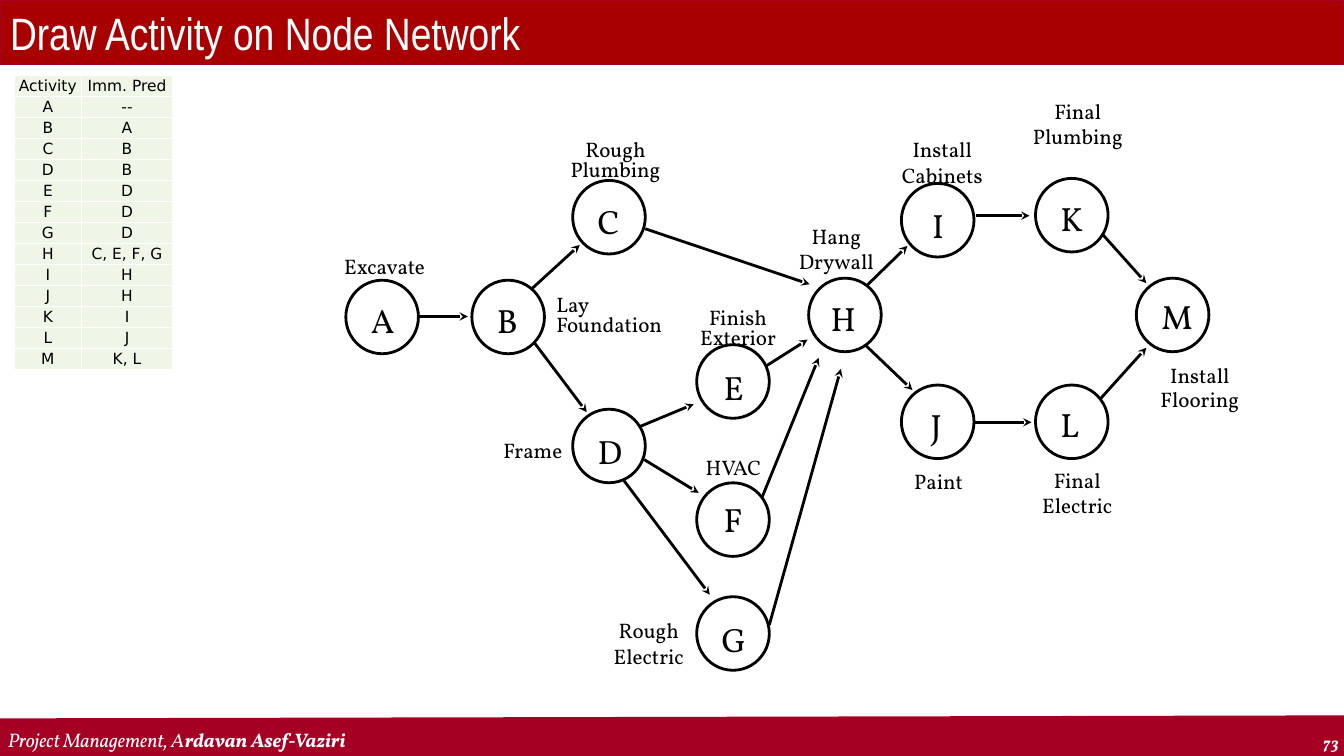
from lxml import etree
from pptx import Presentation
from pptx.dml.color import RGBColor
from pptx.enum.shapes import MSO_CONNECTOR, MSO_SHAPE
from pptx.enum.text import MSO_ANCHOR, MSO_AUTO_SIZE, PP_ALIGN
from pptx.oxml import parse_xml
from pptx.oxml.ns import nsdecls, qn
from pptx.util import Inches, Pt

# Content
TITLE = "Draw Activity on Node Network"
FOOTER = ("Project Management, A", "rdavan Asef-Vaziri")
PAGE = "73"
PREDECESSORS = [
    ("Activity", "Imm. Pred"), ("A", "--"), ("B", "A"), ("C", "B"), ("D", "B"),
    ("E", "D"), ("F", "D"), ("G", "D"), ("H", "C, E, F, G"), ("I", "H"),
    ("J", "H"), ("K", "I"), ("L", "J"), ("M", "K, L"),
]
# Letter: circle left and top, then offset of the letter box
NODES = {
    "A": (3.43, 2.78, 0.15, 0.15), "B": (4.68, 2.78, 0.15, 0.15),
    "C": (5.68, 1.79, 0.15, 0.15), "D": (5.68, 4.06, 0.15, 0.17),
    "E": (6.91, 3.42, 0.17, 0.17), "F": (6.91, 4.79, 0.17, 0.11),
    "G": (6.91, 5.92, 0.15, 0.17), "H": (8.02, 2.76, 0.12, 0.15),
    "I": (8.94, 1.82, 0.20, 0.16), "J": (8.94, 3.82, 0.18, 0.15),
    "K": (10.27, 1.77, 0.15, 0.14), "L": (10.27, 3.82, 0.15, 0.14),
    "M": (11.27, 2.76, 0.15, 0.13),
}
# Activity name, box, line spacing
ACTIVITIES = [
    ("Excavate", (3.23, 2.47, 1.17, 0.35), 1),
    ("Lay Foundation", (5.42, 2.89, 1.47, 0.51), 0.8),
    ("Rough Plumbing", (5.37, 1.35, 1.47, 0.51), 0.8),
    ("Frame", (4.7, 4.29, 1.17, 0.35), 1),
    ("Finish Exterior", (6.78, 3.02, 1.08, 0.51), 0.8),
    ("HVAC", (6.69, 4.46, 1.17, 0.35), 1),
    ("Rough Electric", (5.85, 6.08, 1.17, 0.61), 1),
    ("Hang Drywall", (7.71, 2.17, 1.17, 0.61), 1),
    ("Install Cabinets", (8.76, 1.31, 1.17, 0.61), 1),
    ("Paint", (8.89, 4.6, 0.84, 0.35), 1),
    ("Final Plumbing", (9.97, 0.93, 1.44, 0.61), 1),
    ("Final Electric", (10.11, 4.59, 1.15, 0.61), 1),
    ("Install\nFlooring", (11.38, 3.66, 1.04, 0.51), 0.5),
]
# Start and end of each precedence arrow
ARROWS = [
    (4.16, 3.14, 4.64, 3.14),   # A-B
    (5.28, 2.86, 5.75, 2.43),   # B-C
    (5.3, 3.4, 5.82, 4.09),     # B-D
    (6.35, 4.23, 6.88, 4.01),   # D-E
    (6.39, 4.56, 6.93, 4.89),   # D-F
    (6.19, 4.77, 7.04, 5.9),    # D-G
    (6.4, 2.27, 8.03, 2.82),    # C-H
    (7.6, 3.63, 8.01, 3.37),    # E-H
    (7.56, 4.93, 8.12, 3.55),   # F-H
    (7.63, 6.2, 8.34, 3.66),    # G-H
    (8.6, 2.83, 9, 2.44),       # H-I
    (8.59, 3.43, 9.05, 3.87),   # H-J
    (9.68, 2.14, 10.21, 2.14),  # I-K
    (9.67, 4.19, 10.23, 4.19),  # J-L
    (10.94, 2.33, 11.37, 2.81),  # K-M
    (10.92, 3.95, 11.37, 3.45),  # L-M
]
SERIF, NARROW, SANS = "Vollkorn", "Arial Narrow", "DejaVu Sans"
BLACK, WHITE, BAR, CRIMSON, PALE = "000000", "FFFFFF", "A80000", "A50023", "EFF6E7"


def rgb(value):
    return RGBColor.from_string(value)


def set_font(run, size, face, color=BLACK, bold=False, italic=False):
    run.font.size, run.font.name = Pt(size), face
    run.font.color.rgb = rgb(color)
    run.font.bold, run.font.italic = bold, italic


def set_line(item, color, width):
    item.line.color.rgb, item.line.width = rgb(color), Pt(width)


def add_text(text, box, size, align=PP_ALIGN.CENTER, spacing=1, **style):
    frame = slide.shapes.add_textbox(*map(Inches, box)).text_frame
    frame.word_wrap = True
    frame.auto_size = MSO_AUTO_SIZE.SHAPE_TO_FIT_TEXT
    frame.text = text
    for index, paragraph in enumerate(frame.paragraphs):
        paragraph.alignment, paragraph.line_spacing = align, spacing
        if index:
            paragraph.space_before = Pt(size / 2)
        set_font(paragraph.runs[0], size, SERIF, **style)
    return frame


def add_line(ends, color, width, arrow=False):
    line = slide.shapes.add_connector(MSO_CONNECTOR.STRAIGHT, *map(Inches, ends))
    set_line(line, color, width)
    if arrow:
        etree.SubElement(line.line._get_or_add_ln(), qn("a:tailEnd"), type="stealth")
    etree.SubElement(line.element.spPr, qn("a:effectLst"))


prs = Presentation()
prs.slide_width, prs.slide_height = Inches(13.33), Inches(7.5)
slide = prs.slides.add_slide(prs.slide_layouts[5])

# Title on its bar
title = slide.shapes.title
title.left, title.top, title.width, title.height = map(Inches, (0, 0, 13.33, 0.64))
title.text_frame.text = TITLE
title.text_frame.auto_size = MSO_AUTO_SIZE.NONE
title.text_frame.vertical_anchor = MSO_ANCHOR.MIDDLE
title.text_frame.paragraphs[0].alignment = PP_ALIGN.LEFT
set_font(title.text_frame.paragraphs[0].runs[0], 32.4, NARROW, WHITE)
set_line(title, CRIMSON, 0.75)
bar = slide.shapes.add_shape(MSO_SHAPE.RECTANGLE, *map(Inches, (0, -0.01, 13.33, 0.64)))
bar.shadow.inherit = False
bar.fill.solid()
bar.fill.fore_color.rgb = rgb(BAR)
set_line(bar, BAR, 0.75)
title.element.addprevious(bar.element)

# Footer
add_line((-0.01, 7.33, 13.36, 7.3), CRIMSON, 29.25)
add_text(PAGE, (12.38, 7.22, 1, 0.3), 12, PP_ALIGN.RIGHT,
         color=WHITE, bold=True, italic=True)
footer = add_text(FOOTER[0], (-0.02, 7.16, 10.45, 0.34), 14, PP_ALIGN.LEFT,
                  color=WHITE, italic=True)
footer.vertical_anchor = MSO_ANCHOR.BOTTOM
author = footer.paragraphs[0].add_run()
author.text = FOOTER[1]
set_font(author, 14, SERIF, WHITE, bold=True, italic=True)

# Network
for letter, (x, y, dx, dy) in NODES.items():
    circle = slide.shapes.add_shape(MSO_SHAPE.OVAL, *map(Inches, (x, y, 0.72, 0.73)))
    circle.shadow.inherit = False
    circle.fill.background()
    set_line(circle, BLACK, 2)
    add_text(letter, (x + dx, y + dy, 0.33, 0.51), 24)
for ends in ARROWS:
    add_line(ends, BLACK, 2, arrow=True)
for activity, box, spacing in ACTIVITIES:
    align = PP_ALIGN.LEFT if activity == "Lay Foundation" else PP_ALIGN.CENTER
    add_text(activity, box, 15, align, spacing)

# Predecessor table
table = slide.shapes.add_table(len(PREDECESSORS), 2,
                               *map(Inches, (0.14, 0.75, 1.57, 2.92))).table
table.first_row = table.horz_banding = False
for column, width in zip(table.columns, (0.67, 0.9)):
    column.width = Inches(width)
for row, texts in enumerate(PREDECESSORS):
    for column, text in enumerate(texts):
        cell = table.cell(row, column)
        cell.text = text
        cell.vertical_anchor = MSO_ANCHOR.MIDDLE
        cell.margin_left = cell.margin_right = cell.margin_top = Inches(0.01)
        cell.margin_bottom = 0
        cell.fill.solid()
        cell.fill.fore_color.rgb = rgb(PALE)
        paragraph = cell.text_frame.paragraphs[0]
        paragraph.alignment = PP_ALIGN.CENTER
        set_font(paragraph.runs[0], 11, SANS)
        for index, side in enumerate("LRTB"):
            border = parse_xml(
                f'<a:ln{side} {nsdecls("a")} w="12700"><a:solidFill>'
                f'<a:srgbClr val="{WHITE}"/></a:solidFill></a:ln{side}>')
            cell._tc.get_or_add_tcPr().insert(index, border)

prs.save("out.pptx")
